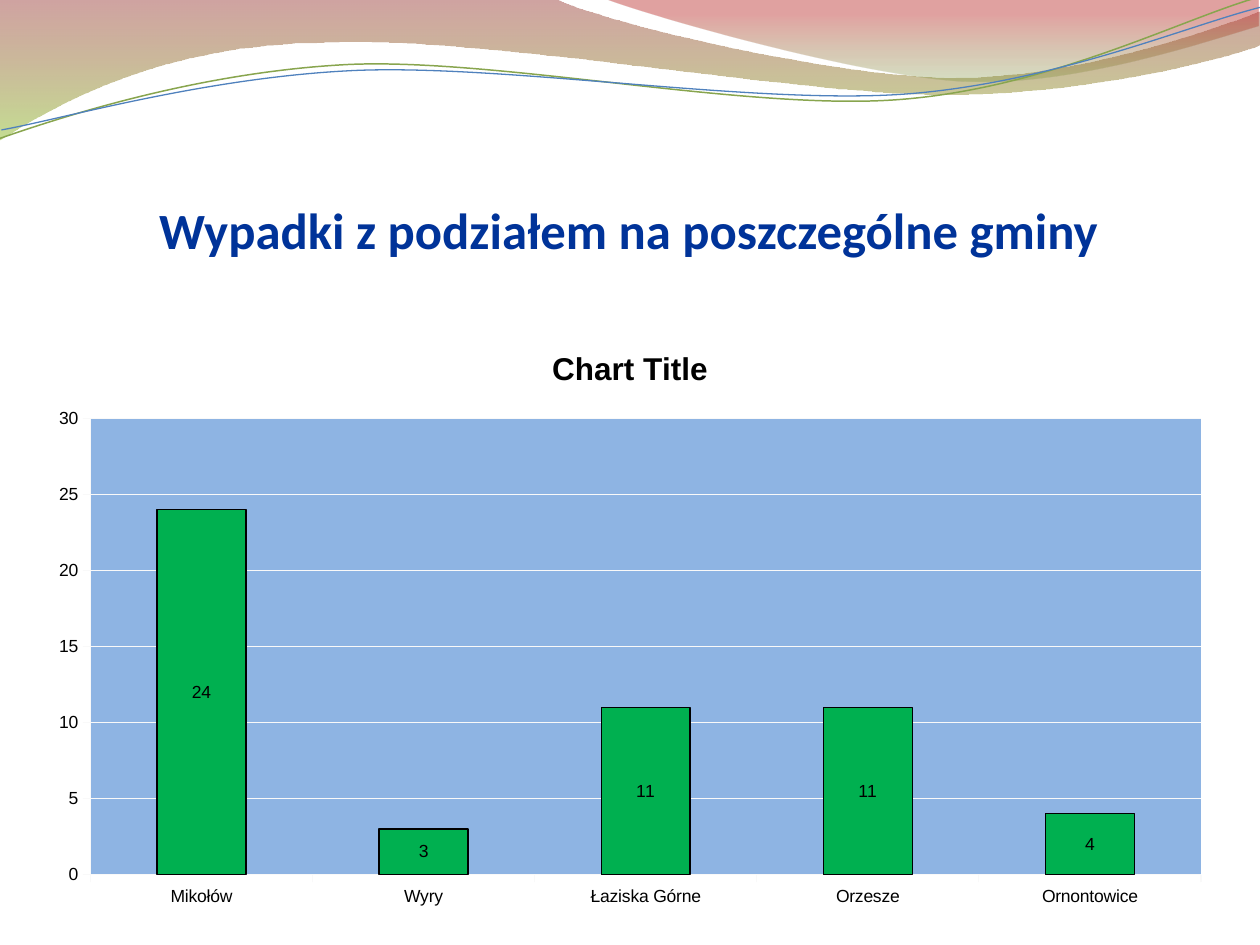
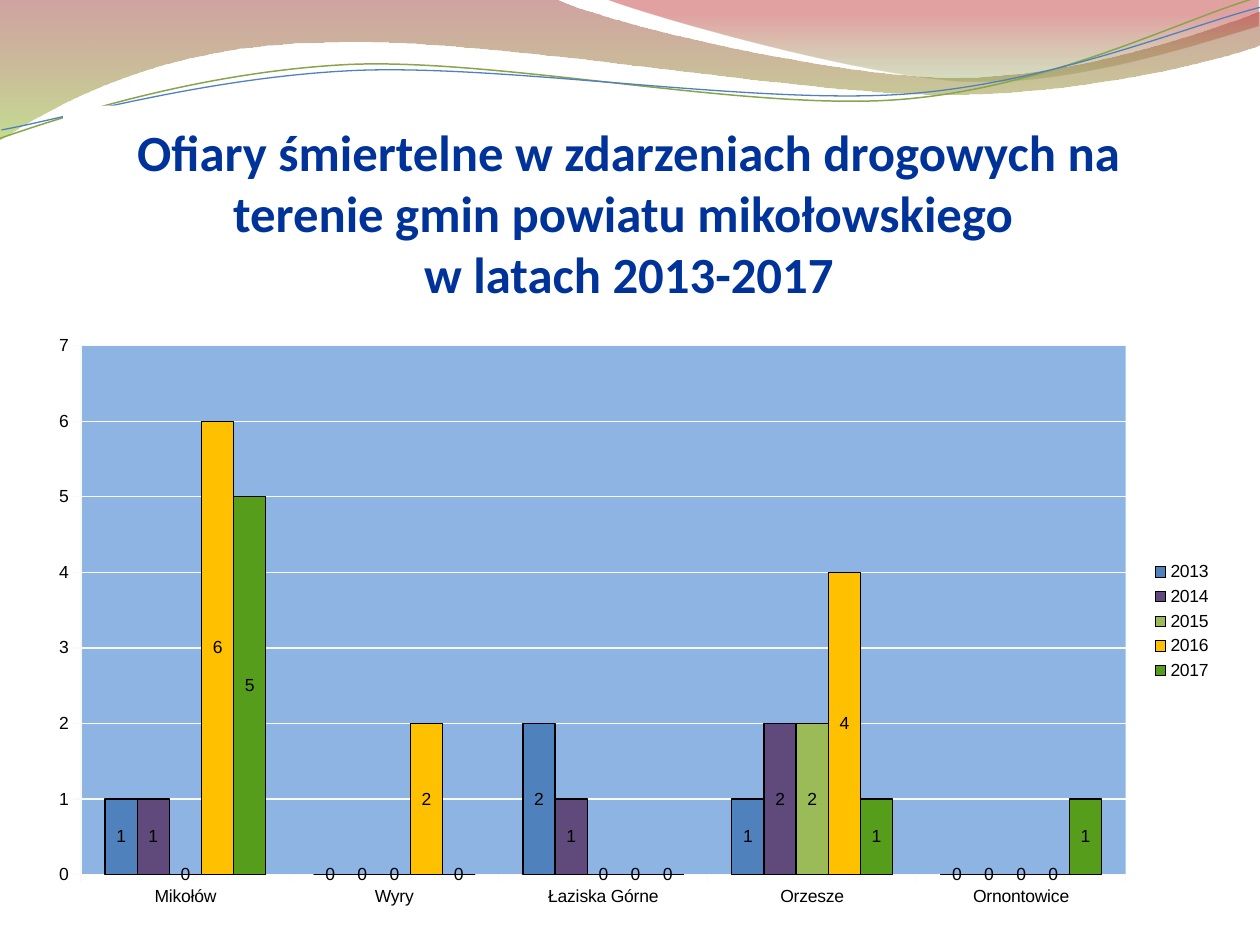
"""Build two slides on road accidents by commune."""
from lxml.etree import SubElement as Sub
from pptx import Presentation
from pptx.chart.data import CategoryChartData as Data
from pptx.dml.color import RGBColor as Rgb
from pptx.enum.chart import XL_CHART_TYPE as Kind
from pptx.enum.chart import XL_LABEL_POSITION as Place
from pptx.enum.chart import XL_LEGEND_POSITION as Side
from pptx.enum.chart import XL_TICK_MARK as Tick
from pptx.enum.text import MSO_ANCHOR as Anchor
from pptx.enum.text import MSO_AUTO_SIZE as Fit
from pptx.enum.text import PP_ALIGN as Align
from pptx.oxml.ns import qn
from pptx.util import Cm, Pt

WHITE = Rgb(0xFF, 0xFF, 0xFF)
BLACK = Rgb(0x00, 0x00, 0x00)
NAVY = Rgb(0x00, 0x33, 0x99)
PALE = Rgb(0xF9, 0xF9, 0xF9)
SKY = Rgb(0x8E, 0xB4, 0xE3)
BRICK = Rgb(0x97, 0x33, 0x30)
RED = Rgb(0xBE, 0x33, 0x30)
LIME = Rgb(0x95, 0xC2, 0x38)
MOSS = Rgb(0x76, 0x95, 0x37)
LEAF = Rgb(0x88, 0xA5, 0x4E)
BLUE = Rgb(0x4F, 0x81, 0xBD)
PLUM = Rgb(0x60, 0x4A, 0x7B)
OLIVE = Rgb(0x9B, 0xBB, 0x59)
AMBER = Rgb(0xFF, 0xC0, 0x00)
GRASS = Rgb(0x57, 0x9D, 0x1C)
GREEN = Rgb(0x00, 0xB0, 0x50)

TOWNS = ["Mikołów", "Wyry", "Łaziska Górne", "Orzesze", "Ornontowice"]

LEFT_WAVE = [
    (0, -0.03), (11.18, -0.03),
    (12.07, 0.43, 16.84, 1.57, 19.25, 1.57),
    (21.64, 1.57, 24.33, 0.64, 25.37, 0.23),
    (25.4, 0.91),
    (24.97, 1.09, 22.07, 1.91, 18.92, 1.91),
    (15.77, 1.88, 9.68, 0.71, 6.53, 0.86),
    (3.28, 0.89, 1.17, 2.08, -0.03, 2.84),
    (0, -0.03),
]
RIGHT_WAVE = [
    (12.17, -0.03),
    (12.93, 0.28, 17.32, 1.55, 19.51, 1.65),
    (21.72, 1.73, 24.41, 0.81, 25.37, 0.53),
    (25.37, 0), (12.17, -0.03),
]
LEAF_CURVE = [
    (0, 2.79),
    (1.24, 2.36, 4.01, 1.45, 7.04, 1.3),
    (10.06, 1.17, 15.06, 2.24, 18.11, 2.01),
    (21.16, 1.78, 23.83, 0.38, 25.35, -0.05),
]
BLUE_CURVE = [
    (0.03, 2.62),
    (1.22, 2.41, 4.17, 1.55, 7.19, 1.42),
    (10.24, 1.3, 15.16, 2.11, 18.21, 1.9),
    (21.23, 1.68, 23.9, 0.53, 25.4, 0.15),
]


def add_path(slide, route, close):
    """Draw a freeform; six-number steps become cubic curves."""
    ends = [(Cm(step[-2]), Cm(step[-1])) for step in route]
    pen = slide.shapes.build_freeform(*ends[0])
    pen.add_line_segments(ends[1:], close=close)
    shape = pen.convert_to_shape()
    shape.shadow.inherit = False
    lines = list(shape.element.iter(qn("a:lnTo")))
    for line, step in zip(lines, route[1:]):
        if len(step) == 6:
            line.tag = qn("a:cubicBezTo")
            for i in (0, 2):
                x, y = Cm(step[i]) - shape.left, Cm(step[i + 1]) - shape.top
                point = Sub(line, qn("a:pt"), x=str(x), y=str(y))
                line.insert(i // 2, point)
    return shape


def add_wave(slide, route, angle, stops):
    """Draw a closed wave with a see-through gradient."""
    wave = add_path(slide, route, True)
    wave.line.fill.background()
    wave.fill.gradient()
    wave.fill.gradient_angle = angle
    for stop, (place, color, _) in zip(wave.fill.gradient_stops, stops):
        stop.position = place
        stop.color.rgb = color
    tints = wave.element.spPr.iter(qn("a:srgbClr"))
    for tint, (_, _, alpha) in zip(list(tints), stops):
        Sub(tint, qn("a:alpha"), val=str(alpha * 1000))
    return wave


def add_curve(slide, route, color, width):
    """Draw an open thin curve."""
    curve = add_path(slide, route, False)
    curve.fill.background()
    curve.line.color.rgb = color
    curve.line.width = Pt(width)
    return curve


def set_band(deck, slide):
    """Draw the wavy band and move it to the slide master."""
    band = [
        add_wave(slide, LEFT_WAVE, 270, [(0, BRICK, 45), (1, LIME, 55)]),
        add_wave(slide, RIGHT_WAVE, 90, [(0, MOSS, 30), (0.8, RED, 45)]),
        add_curve(slide, LEAF_CURVE, LEAF, 0.85),
        add_curve(slide, BLUE_CURVE, BLUE, 0.75),
    ]
    tree = deck.slide_master.element.cSld.spTree
    for i, shape in enumerate(band, 20):
        shape.element.nvSpPr.cNvPr.id = i
        tree.append(shape.element)


def set_title(slide, top, height, lines):
    """Place and format the slide title."""
    title = slide.shapes.title
    title.left, title.top = Cm(1.27), Cm(top)
    title.width, title.height = Cm(22.83), Cm(height)
    title.fill.solid()
    title.fill.fore_color.rgb = WHITE
    frame = title.text_frame
    frame.text = "\n".join(lines)
    frame.word_wrap = True
    frame.auto_size = Fit.NONE
    frame.vertical_anchor = Anchor.BOTTOM
    frame.margin_left = frame.margin_right = frame.margin_bottom = 0
    frame.margin_top = Cm(0.13)
    for para in frame.paragraphs:
        para.alignment = Align.CENTER
        set_font(para.font, "Calibri", 29, NAVY, True)


def set_font(font, name, size, color, bold=False):
    """Set the main traits of a font."""
    font.name, font.size, font.bold = name, Pt(size), bold
    font.color.rgb = color


def set_line(line, color):
    """Give a thin solid line."""
    line.color.rgb = color
    line.width = Pt(0.75)


def fill_plot(chart):
    """Fill the plot area."""
    area = chart.element.find(".//" + qn("c:plotArea"))
    fill = Sub(Sub(area, qn("c:spPr")), qn("a:solidFill"))
    Sub(fill, qn("a:srgbClr"), val=str(SKY))


def add_bars(slide, rows, top, step):
    """Add a column chart; rows hold name, colour and values."""
    data = Data()
    data.categories = TOWNS
    for name, _, vals in rows:
        data.add_series(name, vals)
    chart = slide.shapes.add_chart(
        Kind.COLUMN_CLUSTERED, Cm(0.71), Cm(6.53), Cm(23.98), Cm(11.99), data).chart
    set_font(chart.font, "Arial", 10, BLACK)
    chart.has_title = chart.has_legend = False
    for axis in (chart.category_axis, chart.value_axis):
        axis.major_tick_mark = Tick.OUTSIDE
        axis.minor_tick_mark = Tick.NONE
        set_line(axis.format.line, PALE)
    scale = chart.value_axis
    scale.minimum_scale, scale.maximum_scale = 0, top
    scale.major_unit = step
    set_line(scale.major_gridlines.format.line, PALE)
    plot = chart.plots[0]
    plot.vary_by_categories = False
    plot.gap_width, plot.overlap = 150, 0
    for bars, (_, color, _) in zip(plot.series, rows):
        bars.format.fill.solid()
        bars.format.fill.fore_color.rgb = color
        set_line(bars.format.line, BLACK)
        bars.data_labels.show_value = True
        bars.data_labels.position = Place.CENTER
    fill_plot(chart)
    return chart


def main():
    """Build and save the deck."""
    deck = Presentation()
    deck.slide_width, deck.slide_height = Cm(25.4), Cm(19.05)
    layout = deck.slide_layouts[5]

    slide = deck.slides.add_slide(layout)
    set_band(deck, slide)
    set_title(slide, 2.92, 2.31, ["Wypadki z podziałem na poszczególne gminy"])
    rows = [("Series 1", GREEN, (24, 3, 11, 11, 4))]
    chart = add_bars(slide, rows, 30, 5)
    chart.has_title = True
    head = chart.chart_title
    head.include_in_layout = False
    head.text_frame.text = "Chart Title"
    set_font(head.text_frame.paragraphs[0].font, "Arial", 18, BLACK, True)

    slide = deck.slides.add_slide(layout)
    set_title(slide, 2.13, 3.99, [
        "Ofiary śmiertelne w zdarzeniach drogowych na terenie gmin powiatu mikołowskiego ",
        "w latach 2013-2017"])
    rows = [
        ("2013", BLUE, (1, 0, 2, 1, 0)),
        ("2014", PLUM, (1, 0, 1, 2, 0)),
        ("2015", OLIVE, (0, 0, 0, 2, 0)),
        ("2016", AMBER, (6, 2, 0, 4, 0)),
        ("2017", GRASS, (5, 0, 0, 1, 1)),
    ]
    chart = add_bars(slide, rows, 7, 1)
    chart.has_legend = True
    chart.legend.position = Side.RIGHT
    chart.legend.include_in_layout = False

    deck.save("out.pptx")


if __name__ == "__main__":
    main()
